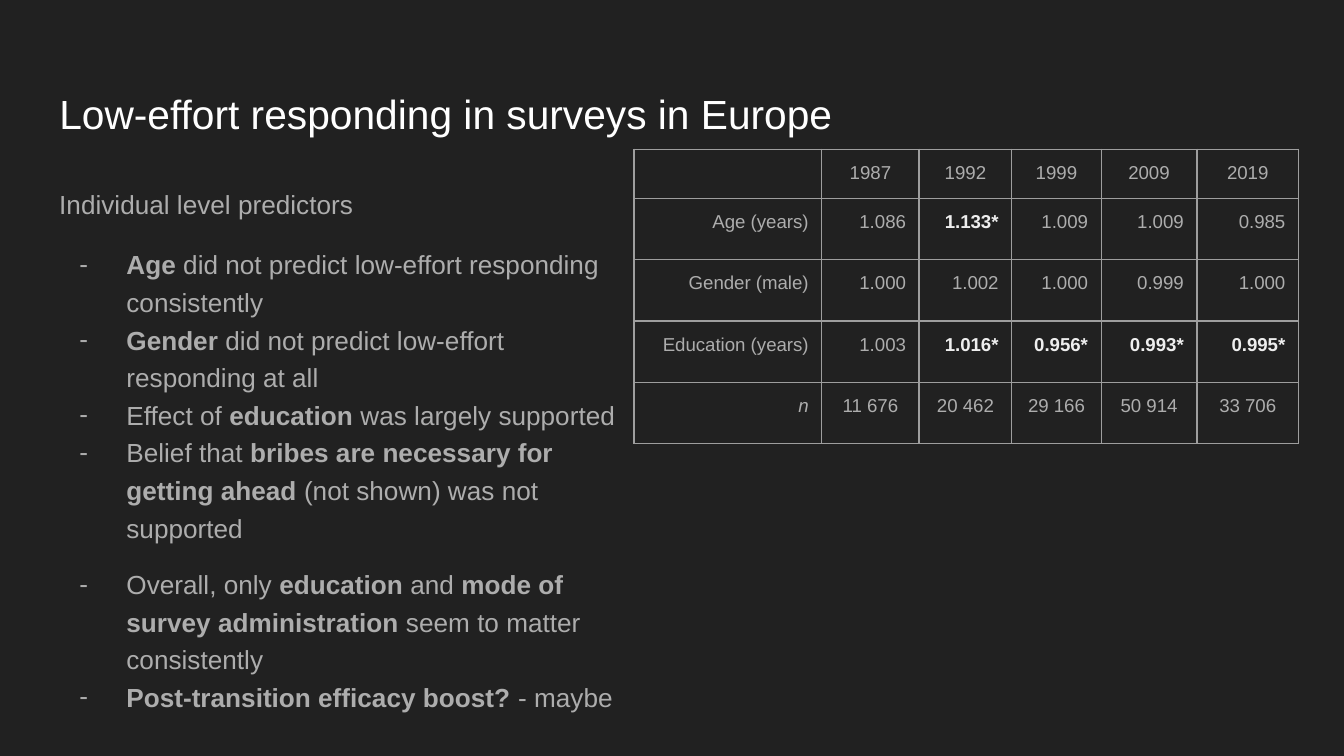
from lxml.etree import SubElement
from pptx import Presentation
from pptx.dml.color import RGBColor
from pptx.enum.text import MSO_ANCHOR, MSO_AUTO_SIZE, PP_ALIGN
from pptx.oxml.ns import qn
from pptx.util import Cm, Pt

BACKGROUND = "212121"
WHITE = "FFFFFF"
GREY = "ADADAD"
HIGHLIGHT = "EEEEEE"
GRID = "9E9E9E"
INSET = Cm(0.25)
LINE_SPACING = 1.2

PREDICTORS = [
    (0, [("Age", True), (" did not predict low-effort responding consistently", False)]),
    (0, [("Gender", True), (" did not predict low-effort responding at all", False)]),
    (0, [("Effect of ", False), ("education", True), (" was largely supported", False)]),
    (0, [("Belief that ", False), ("bribes are necessary for getting ahead", True),
         (" (not shown) was not supported", False)]),
    (10, [("Overall, only ", False), ("education ", True), ("and ", False),
          ("mode of survey administration", True), (" seem to matter consistently", False)]),
    (0, [("Post-transition efficacy boost? ", True), ("- maybe", False)]),
]

ESTIMATES = [
    ["", "1987", "1992", "1999", "2009", "2019"],
    ["Age (years)", "1.086", "1.133*", "1.009", "1.009", "0.985"],
    ["Gender (male)", "1.000", "1.002", "1.000", "0.999", "1.000"],
    ["Education (years)", "1.003", "1.016*", "0.956*", "0.993*", "0.995*"],
    ["n", "11 676", "20 462", "29 166", "50 914", "33 706"],
]
COLUMN_WIDTHS = [3.55, 1.84, 1.75, 1.69, 1.81, 1.92]
ROW_HEIGHTS = [0.71] + [1.16] * 4


def color(value):
    return RGBColor.from_string(value)


def add_run(paragraph, text, size, fill, bold=False, italic=False):
    run = paragraph.add_run()
    run.text = text
    font = run.font
    font.name = "Arial"
    font.size = Pt(size)
    font.bold = bold
    font.italic = italic
    font.color.rgb = color(fill)


def format_frame(frame):
    frame.word_wrap = True
    frame.auto_size = MSO_AUTO_SIZE.NONE
    frame.vertical_anchor = MSO_ANCHOR.TOP
    frame.margin_left = frame.margin_right = INSET
    frame.margin_top = frame.margin_bottom = INSET


def add_dash(paragraph):
    properties = paragraph._p.get_or_add_pPr()
    properties.set("marL", str(Cm(1.27)))
    properties.set("indent", str(-Cm(0.89)))
    bullet_color = SubElement(properties, qn("a:buClr"))
    SubElement(bullet_color, qn("a:srgbClr"), val=GREY)
    SubElement(properties, qn("a:buFont"), typeface="Arial")
    SubElement(properties, qn("a:buChar"), char="-")


def set_title(slide, text):
    title = slide.shapes.title
    title.left, title.top = Cm(0.87), Cm(1.24)
    title.width, title.height = Cm(23.67), Cm(1.6)
    format_frame(title.text_frame)
    heading = title.text_frame.paragraphs[0]
    heading.alignment = PP_ALIGN.LEFT
    heading.line_spacing = LINE_SPACING
    add_run(heading, text, 21.8, WHITE)


def add_predictors(slide, heading, items):
    body = slide.shapes.add_textbox(Cm(0.87), Cm(3.2), Cm(11.1), Cm(10.67)).text_frame
    format_frame(body)
    intro = body.paragraphs[0]
    intro.line_spacing = LINE_SPACING
    add_run(intro, heading, 14, GREY)
    for index, (gap, phrases) in enumerate(items):
        point = body.add_paragraph()
        point.line_spacing = LINE_SPACING
        point.space_before = Pt(gap if index else 12)
        add_dash(point)
        for text, bold in phrases:
            add_run(point, text, 14, GREY, bold)


def add_borders(cell):
    properties = cell._tc.get_or_add_tcPr()
    for side in ("lnL", "lnR", "lnT", "lnB"):
        border = SubElement(properties, qn(f"a:{side}"), w=str(Pt(0.75)))
        fill = SubElement(border, qn("a:solidFill"))
        SubElement(fill, qn("a:srgbClr"), val=GRID)


def fill_cell(cell, text, alignment):
    add_borders(cell)
    cell.fill.background()
    cell.margin_left = cell.margin_right = INSET
    cell.margin_top = cell.margin_bottom = INSET
    entry = cell.text_frame.paragraphs[0]
    entry.alignment = alignment
    if text:
        significant = text.endswith("*")
        add_run(entry, text, 10, HIGHLIGHT if significant else GREY,
                significant, text == "n")
    else:
        SubElement(entry._p, qn("a:endParaRPr"), sz="1000")


def add_estimates(slide, rows):
    frame = slide.shapes.add_table(len(rows), len(rows[0]), Cm(11.98), Cm(2.82),
                                   Cm(sum(COLUMN_WIDTHS)), Cm(sum(ROW_HEIGHTS)))
    table = frame.table
    table.first_row = False
    table.horz_banding = False
    for column, width in zip(table.columns, COLUMN_WIDTHS):
        column.width = Cm(width)
    for row, height in zip(table.rows, ROW_HEIGHTS):
        row.height = Cm(height)
    for r, values in enumerate(rows):
        for c, text in enumerate(values):
            centred = c > 0 and r in (0, len(rows) - 1)
            fill_cell(table.cell(r, c), text,
                      PP_ALIGN.CENTER if centred else PP_ALIGN.RIGHT)


def main():
    presentation = Presentation()
    presentation.slide_width = Cm(25.4)
    presentation.slide_height = Cm(14.29)
    slide = presentation.slides.add_slide(presentation.slide_layouts[5])
    slide.background.fill.solid()
    slide.background.fill.fore_color.rgb = color(BACKGROUND)
    set_title(slide, "Low-effort responding in surveys in Europe")
    add_predictors(slide, "Individual level predictors", PREDICTORS)
    add_estimates(slide, ESTIMATES)
    presentation.save("out.pptx")


if __name__ == "__main__":
    main()
